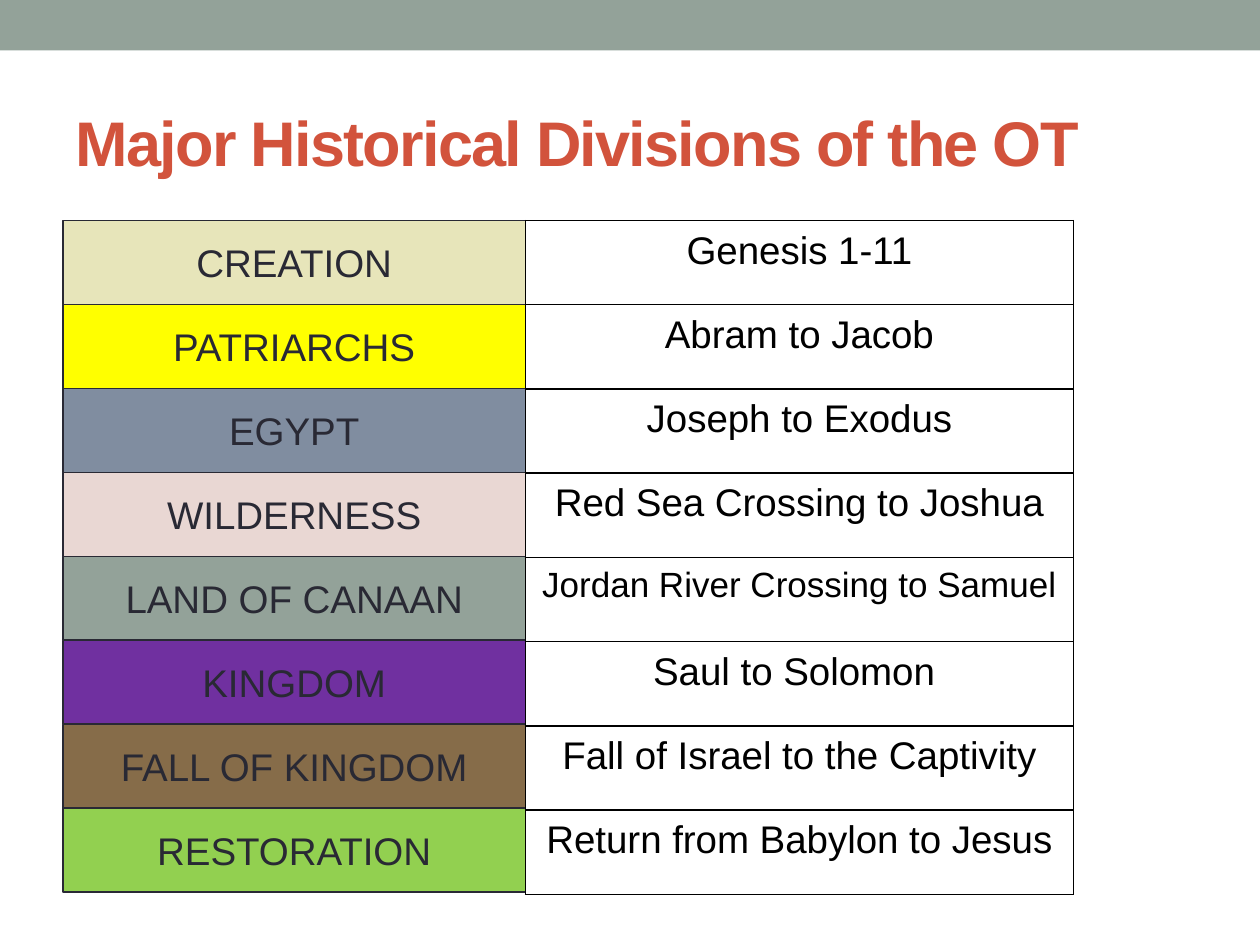
from lxml.etree import SubElement
from pptx import Presentation
from pptx.dml.color import RGBColor
from pptx.enum.shapes import MSO_SHAPE
from pptx.enum.text import MSO_ANCHOR, MSO_AUTO_SIZE, PP_ALIGN
from pptx.oxml.ns import qn
from pptx.util import Inches, Pt

FONT = "Arial"
SAGE = RGBColor(0x93, 0xA2, 0x99)
RUST = RGBColor(0xD2, 0x53, 0x3C)
INK = RGBColor(0x29, 0x29, 0x34)
BLACK = RGBColor(0, 0, 0)

# Division, its fill, its span, size of the span text
DIVISIONS = [
    ("CREATION", RGBColor(0xE7, 0xE5, 0xBA), "Genesis 1-11", 22),
    ("PATRIARCHS", RGBColor(0xFF, 0xFF, 0x00), "Abram to Jacob", 22),
    ("EGYPT", RGBColor(0x80, 0x8D, 0xA0), "Joseph to Exodus", 22),
    ("WILDERNESS", RGBColor(0xE9, 0xD7, 0xD3), "Red Sea Crossing to Joshua", 22),
    ("LAND OF CANAAN", SAGE, "Jordan River Crossing to Samuel", 20),
    ("KINGDOM", RGBColor(0x70, 0x30, 0xA0), "Saul to Solomon ", 22),
    ("FALL OF KINGDOM", RGBColor(0x86, 0x6C, 0x49), "Fall of Israel to the Captivity", 22),
    ("RESTORATION", RGBColor(0x92, 0xD0, 0x50), "Return from Babylon to Jesus", 22),
]


def place(sp, left, top, width, height):
    sp.left, sp.top, sp.width, sp.height = left, top, width, height


def style_text(p, size, color, align, bold=False):
    p.alignment = align
    for r in p.runs:
        r.font.name = FONT
        r.font.size = Pt(size)
        r.font.color.rgb = color
        r.font.bold = bold


def add_top_bar(s, width, height):
    bar = s.shapes.add_shape(MSO_SHAPE.RECTANGLE, 0, 0, width, height)
    bar.shadow.inherit = False
    bar.fill.solid()
    bar.fill.fore_color.rgb = SAGE
    bar.line.fill.background()


def fill_title(s, left, top, width, height):
    title = s.shapes.title
    place(title, left, top, width, height)
    tf = title.text_frame
    tf.text = "Major Historical Divisions of the OT"
    tf.auto_size = MSO_AUTO_SIZE.NONE
    tf.vertical_anchor = MSO_ANCHOR.MIDDLE
    style_text(tf.paragraphs[0], 36, RUST, PP_ALIGN.LEFT, bold=True)
    tf.paragraphs[0].runs[0].font._element.set("spc", "-100")


def add_divisions(s, left, top, width, height):
    """Stack one coloured box per division; the first is the body placeholder."""
    row = height / len(DIVISIONS)
    for i, (name, color, _, _) in enumerate(DIVISIONS):
        box = (left, int(top + i * row), width, int(row))
        if i == 0:
            sp = s.placeholders[1]
            place(sp, *box)
        else:
            sp = s.shapes.add_shape(MSO_SHAPE.RECTANGLE, *box)
            sp.shadow.inherit = False
        sp.fill.solid()
        sp.fill.fore_color.rgb = color
        sp.line.color.rgb = INK
        sp.line.width = Pt(0.75)
        tf = sp.text_frame
        tf.text = name
        tf.word_wrap = True
        tf.auto_size = MSO_AUTO_SIZE.NONE
        tf.vertical_anchor = MSO_ANCHOR.MIDDLE
        p = tf.paragraphs[0]
        style_text(p, 22, INK, PP_ALIGN.CENTER)
        p.space_before = Pt(4.4)
        # No bullet or hanging indent
        pPr = p._p.get_or_add_pPr()
        pPr.set("marL", "0")
        pPr.set("indent", "0")
        SubElement(pPr, qn("a:buNone"))


def border_cell(cell):
    tcPr = cell._tc.get_or_add_tcPr()
    for i, side in enumerate(("a:lnL", "a:lnR", "a:lnT", "a:lnB")):
        ln = SubElement(tcPr, qn(side), w=str(Pt(1)))
        fill = SubElement(ln, qn("a:solidFill"))
        SubElement(fill, qn("a:srgbClr"), val=str(BLACK))
        # Borders come before the cell's fill
        tcPr.insert(i, ln)


def add_spans(s, left, top, width, height):
    table = s.shapes.add_table(len(DIVISIONS), 1, left, top, width, height).table
    table.first_row = table.horz_banding = False
    for i, (_, _, span, size) in enumerate(DIVISIONS):
        cell = table.cell(i, 0)
        cell.text = span
        cell.fill.background()
        cell.margin_left = cell.margin_right = Inches(0.07)
        cell.margin_top = cell.margin_bottom = Inches(0.07)
        style_text(cell.text_frame.paragraphs[0], size, BLACK, PP_ALIGN.CENTER)
        border_cell(cell)


def main():
    prs = Presentation()
    prs.slide_width, prs.slide_height = Inches(10), Inches(7.5)
    s = prs.slides.add_slide(prs.slide_layouts[1])
    margin, top = Inches(0.5), Inches(1.75)
    label_width = Inches(3.67)

    add_top_bar(s, prs.slide_width, Inches(0.4))
    fill_title(s, margin, Inches(0.58), prs.slide_width - 2 * margin, Inches(1.08))
    add_divisions(s, margin, top, label_width, Inches(5.33))
    add_spans(s, margin + label_width, top, Inches(4.35), Inches(5.35))
    prs.save("out.pptx")


if __name__ == "__main__":
    main()
